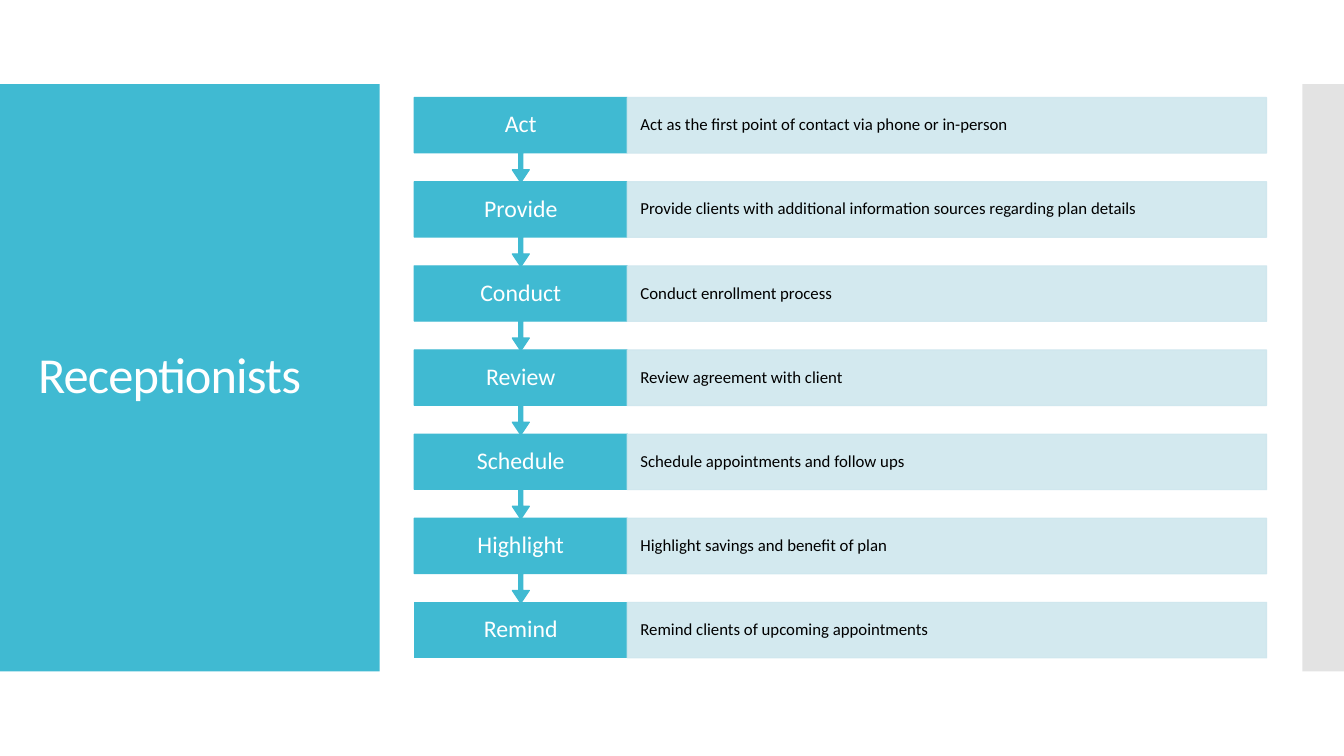
from lxml.etree import SubElement
from pptx import Presentation
from pptx.dml.color import RGBColor
from pptx.enum.shapes import MSO_SHAPE as Shape
from pptx.enum.text import MSO_ANCHOR as Anchor, PP_ALIGN as Align
from pptx.oxml.ns import qn
from pptx.util import Cm, Pt

COLORS = {"teal": "40BAD2", "pale": "CFE7EE", "gray": "C8C8C8",
          "white": "FFFFFF", "black": "000000"}

STEPS = [
    ("Act", "Act as the first point of contact via phone or in-person"),
    ("Provide", "Provide clients with additional information sources regarding plan details"),
    ("Conduct", "Conduct enrollment process"),
    ("Review", "Review agreement with client"),
    ("Schedule", "Schedule appointments and follow ups"),
    ("Highlight", "Highlight savings and benefit of plan"),
    ("Remind", "Remind clients of upcoming appointments"),
]

deck = Presentation()
deck.slide_width, deck.slide_height = Cm(33.87), Cm(19.05)
page = deck.slides.add_slide(deck.slide_layouts[6])


def add_block(kind, left, top, width, height, color, opacity=100, outline=True):
    block = page.shapes.add_shape(kind, Cm(left), Cm(top), Cm(width), Cm(height))
    block.shadow.inherit = False
    rgb = RGBColor.from_string(COLORS[color])
    block.fill.solid()
    block.fill.fore_color.rgb = rgb
    if outline:
        block.line.color.rgb = rgb
        block.line.width = Pt(0.85)
    else:
        block.line.fill.background()
    if opacity < 100:
        for tint in block._element.spPr.iter(qn("a:srgbClr")):
            SubElement(tint, qn("a:alpha"), val=str(opacity * 1000))
    return block


def write(box, text, size, color, align=Align.LEFT, side=0.25, edge=0.13, tracking=0):
    frame = box.text_frame
    frame.word_wrap = True
    frame.vertical_anchor = Anchor.MIDDLE
    frame.margin_left = frame.margin_right = Cm(side)
    frame.margin_top = frame.margin_bottom = Cm(edge)
    para = frame.paragraphs[0]
    para.alignment = align
    para.line_spacing = 0.9
    span = para.add_run()
    span.text = text
    span.font.name = "Calibri"
    span.font.size = Pt(size)
    span.font.color.rgb = RGBColor.from_string(COLORS[color])
    if tracking:
        span.font._element.set("spc", str(tracking))


# Side panels
add_block(Shape.RECTANGLE, 0, 2.12, 9.57, 14.8, "teal", outline=False)
add_block(Shape.RECTANGLE, 32.82, 2.12, 1.05, 14.8, "gray", opacity=50, outline=False)

# Title
title = page.shapes.add_textbox(Cm(0.71), Cm(3.12), Cm(8.18), Cm(12.78))
write(title, "Receptionists", 36, "white", tracking=-60)

# Process steps, last one first so that each arrow tip lies on the next step
FIRST_TOP, PITCH, ROW_HEIGHT, CALLOUT_HEIGHT = 2.46, 2.12, 1.4, 2.14
NAME_LEFT, NAME_WIDTH, DETAIL_WIDTH = 10.44, 5.37, 16.11
last = len(STEPS) - 1

for index in range(last, -1, -1):
    name, detail = STEPS[index]
    top = FIRST_TOP + index * PITCH

    if index == last:
        step = add_block(Shape.RECTANGLE, NAME_LEFT, top, NAME_WIDTH, ROW_HEIGHT, "teal")
    else:
        step = add_block(Shape.DOWN_ARROW_CALLOUT, NAME_LEFT, top,
                         NAME_WIDTH, CALLOUT_HEIGHT, "teal")
        for spot, ratio in enumerate((0.05, 0.1, 0.15, 0.65)):
            step.adjustments[spot] = ratio
    write(step, name, 17, "white", align=Align.CENTER, side=0.38, edge=0.33)

    bar = add_block(Shape.RECTANGLE, NAME_LEFT + NAME_WIDTH, top,
                    DETAIL_WIDTH, ROW_HEIGHT, "pale", opacity=90)
    write(bar, detail, 12, "black", side=0.33, edge=0.43)

deck.save("out.pptx")
